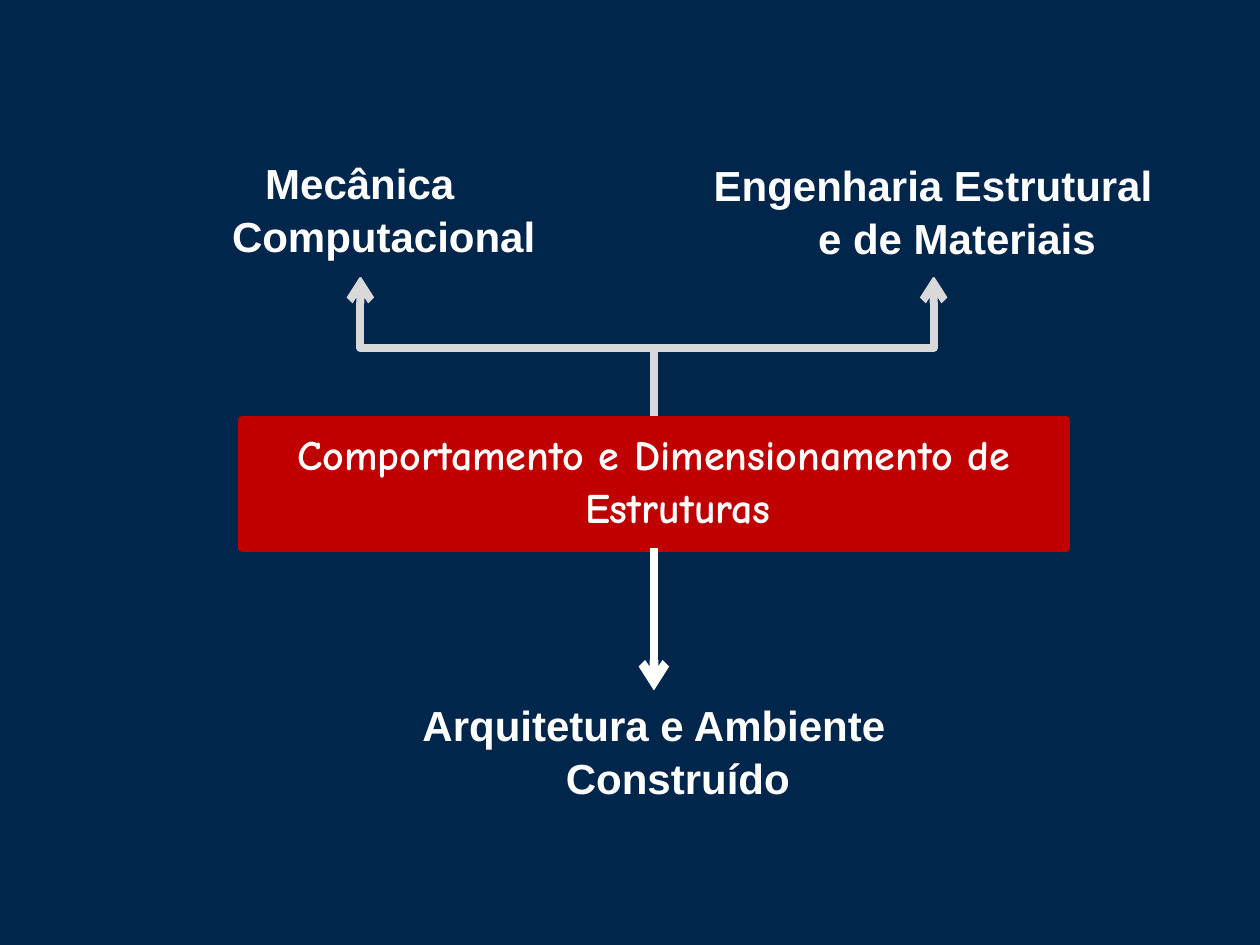
"""Build a slide relating structural design to its three neighbouring fields."""
import lxml.etree
import pptx
import pptx.dml.color
import pptx.enum.shapes
import pptx.enum.text
import pptx.oxml.ns
import pptx.util
from pptx.util import Inches

NAVY, RED, GRAY, WHITE = "00264C", "C00000", "D9D9D9", "FFFFFF"


def color(value):
    return pptx.dml.color.RGBColor.from_string(value)


def style_arrow(connector, line_color, width):
    connector.line.color.rgb = color(line_color)
    connector.line.width = pptx.util.Pt(width)
    tail = lxml.etree.SubElement(connector.line._get_or_add_ln(), pptx.oxml.ns.qn("a:tailEnd"))
    tail.set("type", "arrow")
    lxml.etree.SubElement(connector._element.spPr, pptx.oxml.ns.qn("a:effectLst"))


presentation = pptx.Presentation()
presentation.slide_width = Inches(10)
presentation.slide_height = Inches(7.5)
slide = presentation.slides.add_slide(presentation.slide_layouts[6])
slide.background.fill.solid()
slide.background.fill.fore_color.rgb = color(NAVY)

trunk_x, trunk_y, tip_y = 5.19, 3.33, 2.19
rise = trunk_y - tip_y
middle_y = (trunk_y + tip_y) / 2
for tip_x, rotation in [(2.86, 270), (7.41, 90)]:
    middle_x = (trunk_x + tip_x) / 2
    half_span = abs(tip_x - trunk_x) / 2
    side = -1 if rotation == 270 else 1
    branch = slide.shapes.add_connector(
        pptx.enum.shapes.MSO_CONNECTOR.ELBOW,
        Inches(middle_x + side * rise / 2), Inches(middle_y + half_span),
        Inches(middle_x - side * rise / 2), Inches(middle_y - half_span))
    branch._element.spPr.find(pptx.oxml.ns.qn("a:xfrm")).set("rot", str(rotation * 60000))
    style_arrow(branch, GRAY, 4.5)

fields = [
    ("Comportamento e Dimensionamento de Estruturas", 1.92, 3.33, 6.54, 1.02, RED, "Comic Neue"),
    ("Mecânica Computacional", 1.06, 1.18, 3.59, 1.02, NAVY, "Arial"),
    ("Engenharia Estrutural e de Materiais", 5.45, 1.2, 3.91, 1, NAVY, "Arial"),
    ("Arquitetura e Ambiente Construído", 2.94, 5.48, 4.5, 1.02, NAVY, "Arial"),
]
boxes = []
for text, left, top, width, height, fill, font_name in fields:
    box = slide.shapes.add_shape(
        pptx.enum.shapes.MSO_SHAPE.RECTANGLE,
        Inches(left), Inches(top), Inches(width), Inches(height))
    box.shadow.inherit = False
    box.fill.solid()
    box.fill.fore_color.rgb = color(fill)
    if fill == RED:
        box.line.color.rgb = color(RED)
        box.line.width = pptx.util.Pt(4.5)
    else:
        box.line.fill.background()
    box.text_frame.word_wrap = True
    box.text_frame.vertical_anchor = pptx.enum.text.MSO_ANCHOR.TOP
    paragraph = box.text_frame.paragraphs[0]
    paragraph.text = text
    paragraph.alignment = pptx.enum.text.PP_ALIGN.CENTER
    paragraph.line_spacing = 1.05
    properties = paragraph._p.get_or_add_pPr()
    properties.set("marL", str(Inches(0.38)))
    properties.set("indent", str(Inches(-0.38)))
    paragraph.font.name = font_name
    paragraph.font.size = pptx.util.Pt(24)
    paragraph.font.bold = True
    paragraph.font.color.rgb = color(WHITE)
    boxes.append(box)

down_arrow = slide.shapes.add_connector(
    pptx.enum.shapes.MSO_CONNECTOR.STRAIGHT,
    Inches(trunk_x), Inches(4.35), Inches(trunk_x), Inches(5.48))
down_arrow.begin_connect(boxes[0], 2)
down_arrow.end_connect(boxes[3], 0)
style_arrow(down_arrow, WHITE, 5)

presentation.save("out.pptx")
